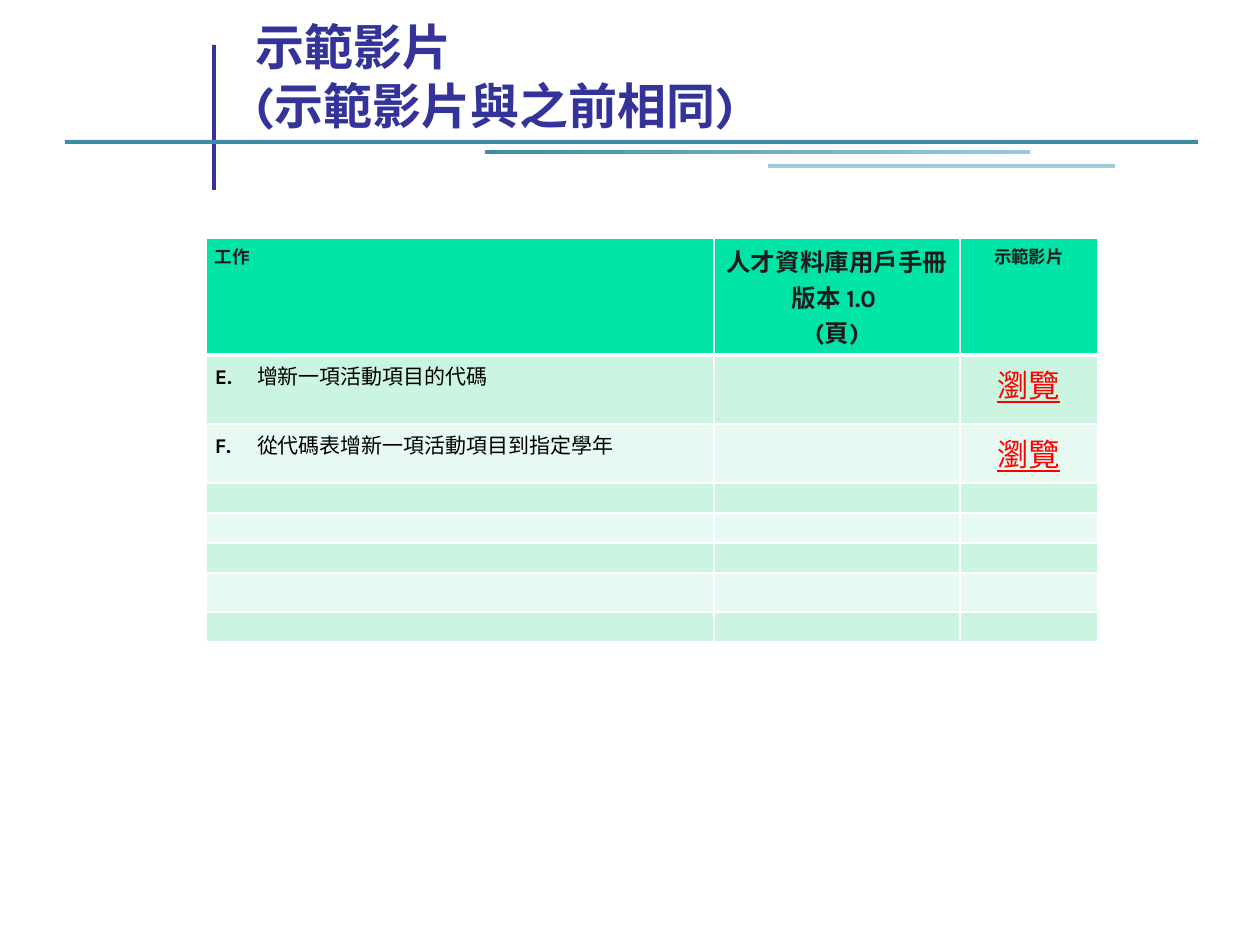
"""Build the demonstration video slide: title with accent bars and a task table."""
from dataclasses import dataclass

from lxml import etree
from pptx import Presentation
from pptx.dml.color import RGBColor
from pptx.enum.shapes import MSO_SHAPE
from pptx.enum.text import MSO_ANCHOR, PP_ALIGN
from pptx.oxml.ns import qn
from pptx.util import Emu, Pt

RECTANGLE = MSO_SHAPE.RECTANGLE
BOTTOM = MSO_ANCHOR.BOTTOM
LEFT, CENTER = PP_ALIGN.LEFT, PP_ALIGN.CENTER

PX_PER_INCH = 126
FONT = "Karla"
NAVY, TEAL, INK, BLACK, RED, WHITE = "333399", "3F8DA5", "1C1C1C", "000000", "FF0000", "FFFFFF"
HEADER_FILL, BAND_FILLS = "00E4A8", ("CCF5E1", "E7FAF1")
COLUMN_WIDTHS = (508, 246, 138)
ROW_HEIGHTS = (117, 69, 59, 30, 30, 30, 39, 30)
TASK_INDENT = 42
CELL_MARGINS = (9, 5)
LINK_MARGINS = (13, 6)


@dataclass(frozen=True)
class Bar:
    left: int
    top: int
    width: int
    height: int
    color: str
    end_color: str = ""


@dataclass(frozen=True)
class Task:
    letter: str
    name: str


BARS = (
    Bar(212, 45, 4, 145, NAVY),
    Bar(65, 140, 1133, 4, TEAL),
    Bar(485, 150, 545, 4, TEAL, "9BCAD9"),
    Bar(768, 164, 347, 4, "A1CDDB"),
)
TASKS = (
    Task("E.", "增新一項活動項目的代碼"),
    Task("F.", "從代碼表增新一項活動項目到指定學年"),
)


def px(length: int) -> Emu:
    return Emu(round(length * 914400 / PX_PER_INCH))


def rgb(color: str) -> RGBColor:
    return RGBColor.from_string(color)


def add_text(paragraph, text: str, *, size: int, color: str, bold=False, underline=False, align=LEFT):
    paragraph.alignment = align
    for index, line in enumerate(text.split("\n")):
        if index:
            paragraph.add_line_break()
        run = paragraph.add_run()
        run.text = line
        run.font.name = FONT
        run.font.size = Pt(size)
        run.font.bold = bold
        run.font.underline = underline
        run.font.color.rgb = rgb(color)


def add_bar(slide, bar: Bar):
    shape = slide.shapes.add_shape(RECTANGLE, px(bar.left), px(bar.top), px(bar.width), px(bar.height))
    shape.shadow.inherit = False
    shape.line.fill.background()
    if bar.end_color:
        shape.fill.gradient()
        shape.fill.gradient_angle = 0
        for stop, color, position in zip(shape.fill.gradient_stops, (bar.color, bar.end_color), (0, 1)):
            stop.color.rgb = rgb(color)
            stop.position = position
    else:
        shape.fill.solid()
        shape.fill.fore_color.rgb = rgb(bar.color)


def add_title(slide, text: str):
    frame = slide.shapes.add_textbox(px(243), px(35), px(987), px(105)).text_frame
    frame.word_wrap = True
    frame.vertical_anchor = BOTTOM
    add_text(frame.paragraphs[0], text, size=28, color=NAVY, bold=True)


def set_margins(cell, horizontal: int, vertical: int):
    cell.margin_left = cell.margin_right = px(horizontal)
    cell.margin_top = cell.margin_bottom = px(vertical)


def style_cell(cell, row: int):
    set_margins(cell, *CELL_MARGINS)
    properties = cell._tc.get_or_add_tcPr()
    widths = {"lnL": 1, "lnR": 1, "lnT": 3 if row == 1 else 1, "lnB": 3 if row == 0 else 1}
    for side, width in widths.items():
        line = etree.SubElement(properties, qn(f"a:{side}"), w=str(Pt(width)))
        solid = etree.SubElement(line, qn("a:solidFill"))
        etree.SubElement(solid, qn("a:srgbClr"), val=WHITE)
    cell.fill.solid()
    cell.fill.fore_color.rgb = rgb(BAND_FILLS[(row - 1) % 2] if row else HEADER_FILL)


def set_empty_size(cell, size: int):
    etree.SubElement(cell.text_frame.paragraphs[0]._p, qn("a:endParaRPr"), sz=str(size * 100))


def fill_header(table):
    work, manual, video = (table.cell(0, column).text_frame for column in range(3))
    add_text(work.paragraphs[0], "工作", size=10, color=INK, bold=True)
    add_text(manual.paragraphs[0], "人才資料庫用戶手冊 版本 1.0 ", size=14, color=INK, bold=True, align=CENTER)
    add_text(manual.add_paragraph(), "(頁)", size=14, color=INK, bold=True, align=CENTER)
    add_text(video.paragraphs[0], "示範影片", size=10, color=INK, bold=True, align=CENTER)


def fill_task(table, row: int, task: Task):
    label = table.cell(row, 0).text_frame.paragraphs[0]
    tabs = etree.SubElement(label._p.get_or_add_pPr(), qn("a:tabLst"))
    etree.SubElement(tabs, qn("a:tab"), pos=str(px(TASK_INDENT)), algn="l")
    add_text(label, f"{task.letter}\t", size=12, color=BLACK, bold=True)
    add_text(label, task.name, size=12, color=BLACK)
    view = table.cell(row, 2)
    set_margins(view, *LINK_MARGINS)
    add_text(view.text_frame.paragraphs[0], "瀏覽", size=18, color=RED, underline=True, align=CENTER)


def add_task_table(slide):
    table = slide.shapes.add_table(
        len(ROW_HEIGHTS), len(COLUMN_WIDTHS), px(206), px(238), px(sum(COLUMN_WIDTHS)), px(sum(ROW_HEIGHTS))
    ).table
    for column, width in zip(table.columns, COLUMN_WIDTHS):
        column.width = px(width)
    for index, (row, height) in enumerate(zip(table.rows, ROW_HEIGHTS)):
        row.height = px(height)
        for cell in row.cells:
            style_cell(cell, index)
    fill_header(table)
    for index, task in enumerate(TASKS, start=1):
        fill_task(table, index, task)
    for cell in table.iter_cells():
        if not cell.text:
            set_empty_size(cell, 6)


def main():
    presentation = Presentation()
    presentation.slide_width, presentation.slide_height = px(1260), px(945)
    slide = presentation.slides.add_slide(presentation.slide_layouts[6])
    for bar in BARS:
        add_bar(slide, bar)
    add_title(slide, "示範影片 \n(示範影片與之前相同)")
    add_task_table(slide)
    presentation.save("out.pptx")


if __name__ == "__main__":
    main()
